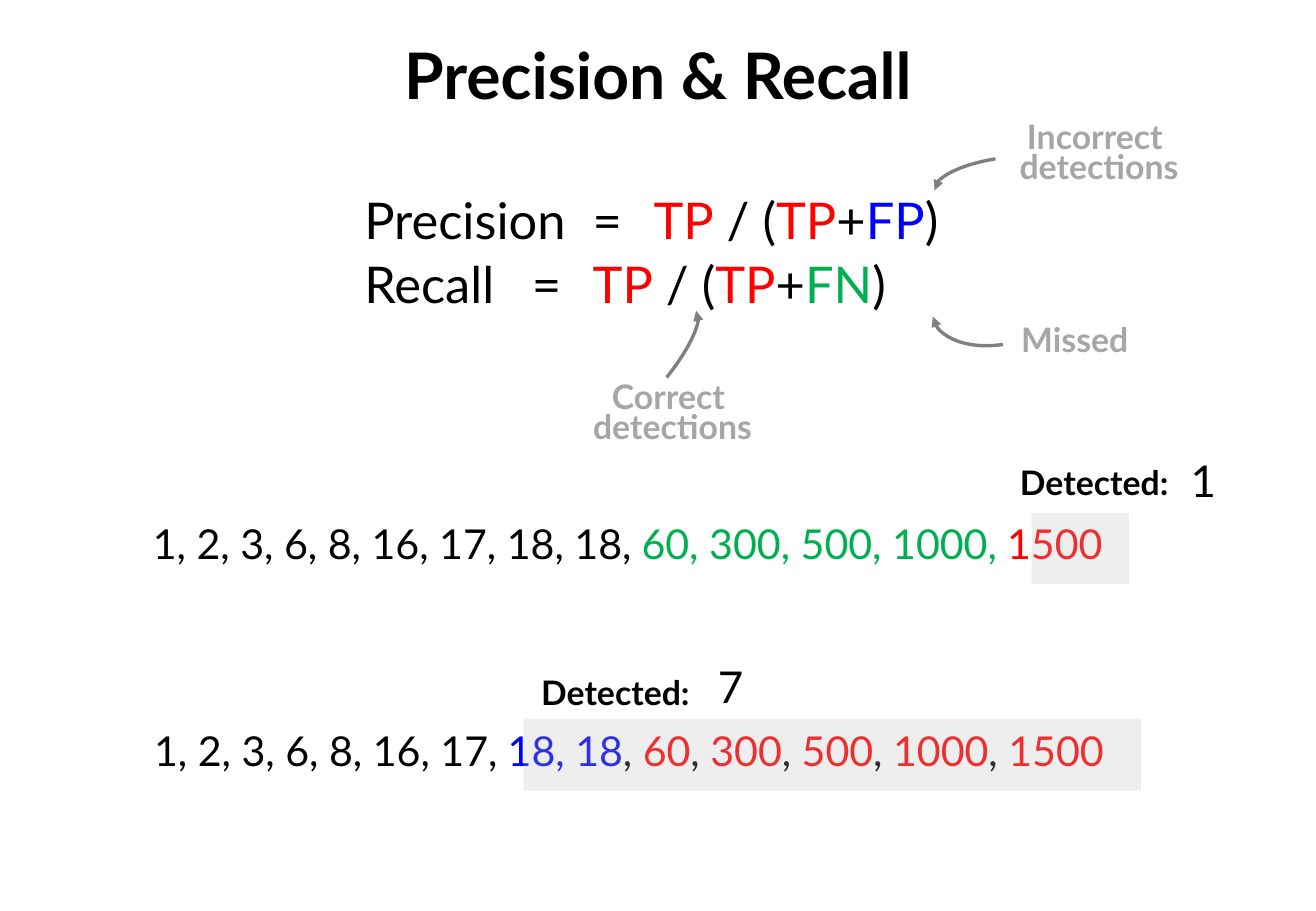
from lxml.etree import SubElement
from pptx import Presentation
from pptx.dml.color import RGBColor
from pptx.enum.shapes import MSO_SHAPE
from pptx.enum.text import MSO_ANCHOR, MSO_AUTO_SIZE, PP_ALIGN
from pptx.oxml.ns import qn
from pptx.util import Pt

PX = 9144
FONT = "Lato"
BLACK, RED, GREEN, BLUE = "000000", "FF0000", "00B050", "0000FF"
LABEL_GRAY, ARROW_GRAY, SHADE_GRAY = "A6A6A6", "808080", "BFBFBF"
HANGING = 38

TITLE = "Precision & Recall"
TITLE_BOX = (18, 21, 1047, 79)

FORMULA_BOX = (290, 156, 524, 109)
FORMULAS = [
    [(f"{measure}\t=\t", BLACK), ("TP", RED), (" / (", BLACK), ("TP", RED),
     ("+", BLACK), (error, error_color), (")", BLACK)]
    for measure, error, error_color in [("Precision", "FP", BLUE), ("Recall", "FN", GREEN)]
]

SEQUENCES = [
    ((116, 422, 830, 51), [
        ("1, 2, 3, 6, 8, 16, 17, 18, 18, ", BLACK),
        ("60, 300, 500, 1000, ", GREEN),
        ("1500", RED),
    ]),
    ((117, 592, 830, 51), [
        ("1, 2, 3, 6, 8, 16, 17, ", BLACK), ("18, 18", BLUE),
        *[part for value in ("60", "300", "500", "1000", "1500")
          for part in ((", ", BLACK), (value, RED))],
    ]),
]

DETECTED_RANGES = [(431, 592, 508, 59), (849, 422, 80, 59)]

LABELS = [
    ((822, 383, 157, 35), ["Detected:"], 20, True, BLACK),
    ((428, 556, 157, 35), ["Detected:"], 20, True, BLACK),
    ((970, 379, 40, 43), ["1"], 26, False, BLACK),
    ((581, 548, 40, 43), ["7"], 26, False, BLACK),
    ((470, 312, 167, 61), ["Correct ", "detections"], 20, True, LABEL_GRAY),
    ((821, 98, 167, 61), ["Incorrect ", "detections"], 20, True, LABEL_GRAY),
    ((826, 265, 117, 35), ["Missed"], 20, True, LABEL_GRAY),
]

ARROWS = [
    ((521, 243, 31, 116), 38.8, False),
    ((804, 95, 36, 107), 261.2, False),
    ((789, 199, 63, 107), 261.2, True),
]


def rgb(color):
    return RGBColor.from_string(color)


def emu(box):
    return [length * PX for length in box]


def set_font(paragraph, size, bold=False, color=BLACK):
    paragraph.font.name = FONT
    paragraph.font.size = Pt(size)
    paragraph.font.bold = bold
    paragraph.font.color.rgb = rgb(color)


def add_lines(slide, box, lines, size, bold=False, color=BLACK):
    frame = slide.shapes.add_textbox(*emu(box)).text_frame
    frame.word_wrap = False
    frame.auto_size = MSO_AUTO_SIZE.SHAPE_TO_FIT_TEXT
    for number, parts in enumerate(lines):
        paragraph = frame.add_paragraph() if number else frame.paragraphs[0]
        set_font(paragraph, size, bold, color)
        for text, part_color in parts:
            run = paragraph.add_run()
            run.text = text
            if part_color != color:
                run.font.color.rgb = rgb(part_color)
    return frame.paragraphs


def hang(paragraph, line_spacing):
    paragraph.line_spacing = line_spacing
    properties = paragraph._p.get_or_add_pPr()
    properties.set("marL", str(HANGING * PX))
    properties.set("indent", str(-HANGING * PX))
    properties.set("defTabSz", str(50 * PX))


def add_detected_range(slide, box):
    shade = slide.shapes.add_shape(MSO_SHAPE.RECTANGLE, *emu(box))
    shade.shadow.inherit = False
    shade.fill.solid()
    shade.fill.fore_color.rgb = rgb(SHADE_GRAY)
    shade.line.fill.background()
    solid_color = shade._element.spPr.find(qn("a:solidFill"))[0]
    SubElement(solid_color, qn("a:alpha"), val="25000")


def add_arrow(slide, box, rotation, flipped):
    arrow = slide.shapes.add_shape(MSO_SHAPE.ARC, *emu(box))
    arrow.shadow.inherit = False
    arrow.rotation = rotation
    arrow.fill.background()
    arrow.line.color.rgb = rgb(ARROW_GRAY)
    arrow.line.width = Pt(2)
    properties = arrow._element.spPr
    if flipped:
        properties.find(qn("a:xfrm")).set("flipH", "1")
    SubElement(properties.find(qn("a:ln")), qn("a:headEnd"), type="triangle")


def main():
    presentation = Presentation()
    presentation.slide_width, presentation.slide_height = emu((1083, 750))
    slide = presentation.slides.add_slide(presentation.slide_layouts[5])

    title = slide.shapes.title
    title.left, title.top, title.width, title.height = emu(TITLE_BOX)
    title.text_frame.text = TITLE
    title.text_frame.auto_size = MSO_AUTO_SIZE.NONE
    title.text_frame.vertical_anchor = MSO_ANCHOR.MIDDLE
    heading = title.text_frame.paragraphs[0]
    heading.alignment = PP_ALIGN.CENTER
    set_font(heading, 38, bold=True)

    for box, parts in SEQUENCES:
        add_lines(slide, box, [parts], 24.4)

    formulas = add_lines(slide, FORMULA_BOX, FORMULAS, 30)
    for formula in formulas:
        hang(formula, 0.9)
    formulas[0].space_after = Pt(6)

    for box in DETECTED_RANGES:
        add_detected_range(slide, box)

    for box, lines, size, bold, color in LABELS:
        parts = [[(line, color)] for line in lines]
        for paragraph in add_lines(slide, box, parts, size, bold, color):
            paragraph.alignment = PP_ALIGN.CENTER
            hang(paragraph, 0.75)

    for box, rotation, flipped in ARROWS:
        add_arrow(slide, box, rotation, flipped)

    presentation.save("out.pptx")


if __name__ == "__main__":
    main()
